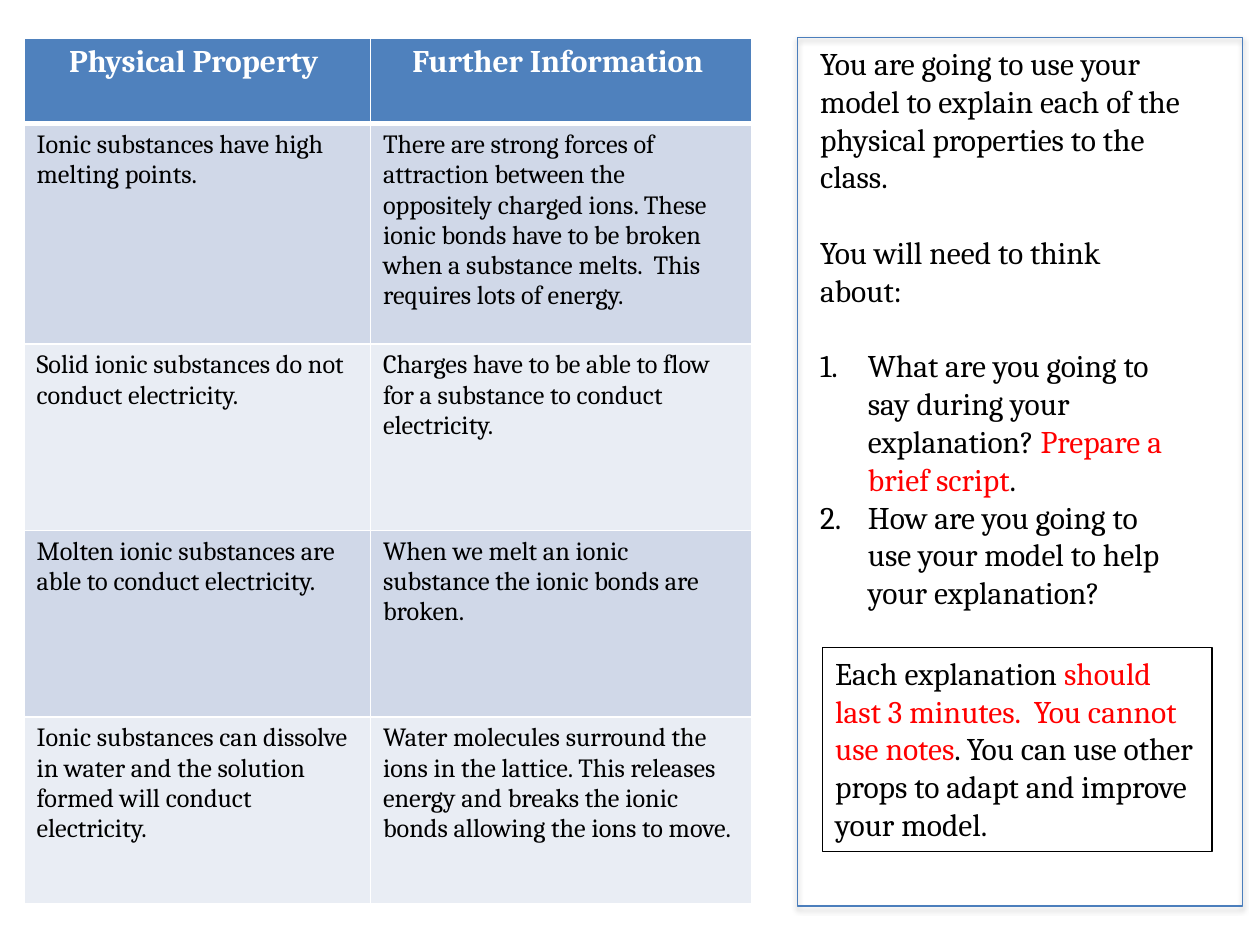
from dataclasses import dataclass
from pptx import Presentation
from pptx.dml.color import RGBColor as Rgb
from pptx.enum.shapes import MSO_SHAPE as Geo
from pptx.enum.text import MSO_AUTO_SIZE as Auto, PP_ALIGN as Align
from pptx.oxml import parse_xml as to_xml
from pptx.oxml.ns import nsdecls
from pptx.util import Inches, Pt


@dataclass(frozen=True)
class Theme:
    """Colours and type sizes of the slide."""
    face: str = "Cambria"
    ink: str = "000000"
    white: str = "FFFFFF"
    red: str = "FF0000"
    head: str = "4F81BD"
    frame: str = "4B7EBC"
    bands: tuple = ("D0D8E8", "E9EDF4")
    big: int = 18
    small: int = 15
    gap: float = 21.6


T = Theme()
COLS = (2.75, 3.03)
ROWS = (0.68, 1.75, 1.48, 1.48, 1.48)
FACTS = [
    ("Physical Property ", "Further Information "),
    ("Ionic substances have high melting points.",
     "There are strong forces of attraction between the oppositely charged ions. "
     "These ionic bonds have to be broken when a substance melts.  "
     "This requires lots of energy."),
    ("Solid ionic substances do not conduct electricity.",
     "Charges have to be able to flow for a substance to conduct electricity."),
    ("Molten ionic substances are able to conduct electricity.",
     "When we melt an ionic substance the ionic bonds are broken."),
    ("Ionic substances can dissolve in water and the solution formed will "
     "conduct electricity.",
     "Water molecules surround the ions in the lattice. This releases energy "
     "and breaks the ionic bonds allowing the ions to move."),
]
TASK = [
    ({}, [("You are going to use your model to explain each of the physical "
           "properties to the class.", T.ink)]),
    ({"gap": T.gap}, [("You will need to think about:", T.ink)]),
    ({"gap": T.gap, "num": True},
     [("What are you going to say during your explanation? ", T.ink),
      ("Prepare a brief script", T.red), (".", T.ink)]),
    ({"num": True}, [("How are you going to use your model to help your "
                      "explanation?", T.ink)]),
]
NOTE = [
    ({}, [("Each explanation ", T.ink),
          ("should last 3 minutes.  You cannot use notes", T.red),
          (". You can use other props to adapt and improve your model.", T.ink)]),
]


def style(item, form):
    """Set each attribute named in a format dict."""
    for name, value in form.items():
        setattr(item, name, value)


def add_run(para, text, color, size=T.big, bold=False):
    """Add one run of text to a paragraph."""
    run = para.add_run()
    run.text = text
    style(run.font, {"name": T.face, "size": Pt(size), "bold": bold})
    run.font.color.rgb = Rgb.from_string(color)


def number(para):
    """Give a paragraph a hanging automatic number."""
    props = para._p.get_or_add_pPr()
    props.set("marL", str(Inches(0.38)))
    props.set("indent", str(-Inches(0.38)))
    props.append(to_xml(f'<a:buFont {nsdecls("a")} typeface="+mj-lt"/>'))
    props.append(to_xml(f'<a:buAutoNum {nsdecls("a")} type="arabicPeriod"/>'))


def outline(shape, color):
    """Draw a thin line round a shape."""
    shape.line.color.rgb = Rgb.from_string(color)
    shape.line.width = Pt(0.75)


def add_text(slide, box, paras):
    """Add a wrapped text box of styled paragraphs."""
    shape = slide.shapes.add_textbox(*map(Inches, box))
    frame = shape.text_frame
    style(frame, {"word_wrap": True, "auto_size": Auto.SHAPE_TO_FIT_TEXT})
    for i, (form, runs) in enumerate(paras):
        para = frame.add_paragraph() if i else frame.paragraphs[0]
        if "gap" in form:
            para.space_before = Pt(form["gap"])
        if form.get("num"):
            number(para)
        for text, color in runs:
            add_run(para, text, color)
    return shape


def edge(cell, side, width):
    """Add one white border to a cell."""
    cell._tc.get_or_add_tcPr().append(to_xml(
        f'<a:ln{side} {nsdecls("a")} w="{Pt(width)}"><a:solidFill>'
        f'<a:srgbClr val="{T.white}"/></a:solidFill></a:ln{side}>'))


def fill_cell(cell, text, row):
    """Write and colour one table cell."""
    head = row == 0
    widths = {"L": 1, "R": 1, "T": 3 if row == 1 else 1, "B": 3 if head else 1}
    for side, width in widths.items():
        edge(cell, side, width)
    cell.fill.solid()
    cell.fill.fore_color.rgb = Rgb.from_string(
        T.head if head else T.bands[(row - 1) % 2])
    para = cell.text_frame.paragraphs[0]
    para.alignment = Align.CENTER if head else Align.LEFT
    form = (T.white, T.big, True) if head else (T.ink, T.small, False)
    add_run(para, text, *form)


def add_facts(slide):
    """Add the table of physical properties."""
    box = (0.19, 0.3, sum(COLS), sum(ROWS))
    table = slide.shapes.add_table(
        len(ROWS), len(COLS), *map(Inches, box)).table
    for col, width in zip(table.columns, COLS):
        col.width = Inches(width)
    for row, high in zip(table.rows, ROWS):
        row.height = Inches(high)
    for r, texts in enumerate(FACTS):
        for c, text in enumerate(texts):
            fill_cell(table.cell(r, c), text, r)


def add_frame(slide, box):
    """Add an open rectangle with a soft shadow."""
    shape = slide.shapes.add_shape(Geo.RECTANGLE, *map(Inches, box))
    shape.fill.background()
    outline(shape, T.frame)
    shape._element.spPr.append(to_xml(
        f'<a:effectLst {nsdecls("a")}><a:outerShdw blurRad="{Pt(3.1)}" '
        f'dist="{Pt(1.8)}" dir="5400000" rotWithShape="0">'
        f'<a:srgbClr val="{T.ink}"><a:alpha val="35000"/></a:srgbClr>'
        '</a:outerShdw></a:effectLst>'))


def main():
    """Build the slide and save it."""
    deck = Presentation()
    style(deck, {"slide_width": Inches(10), "slide_height": Inches(7.5)})
    slide = deck.slides.add_slide(deck.slide_layouts[6])
    add_facts(slide)
    add_text(slide, (6.41, 0.3, 3.09, 4.64), TASK)
    note = add_text(slide, (6.53, 5.14, 3.09, 1.62), NOTE)
    outline(note, T.ink)
    add_frame(slide, (6.33, 0.3, 3.53, 6.89))
    deck.save("out.pptx")


if __name__ == "__main__":
    main()
